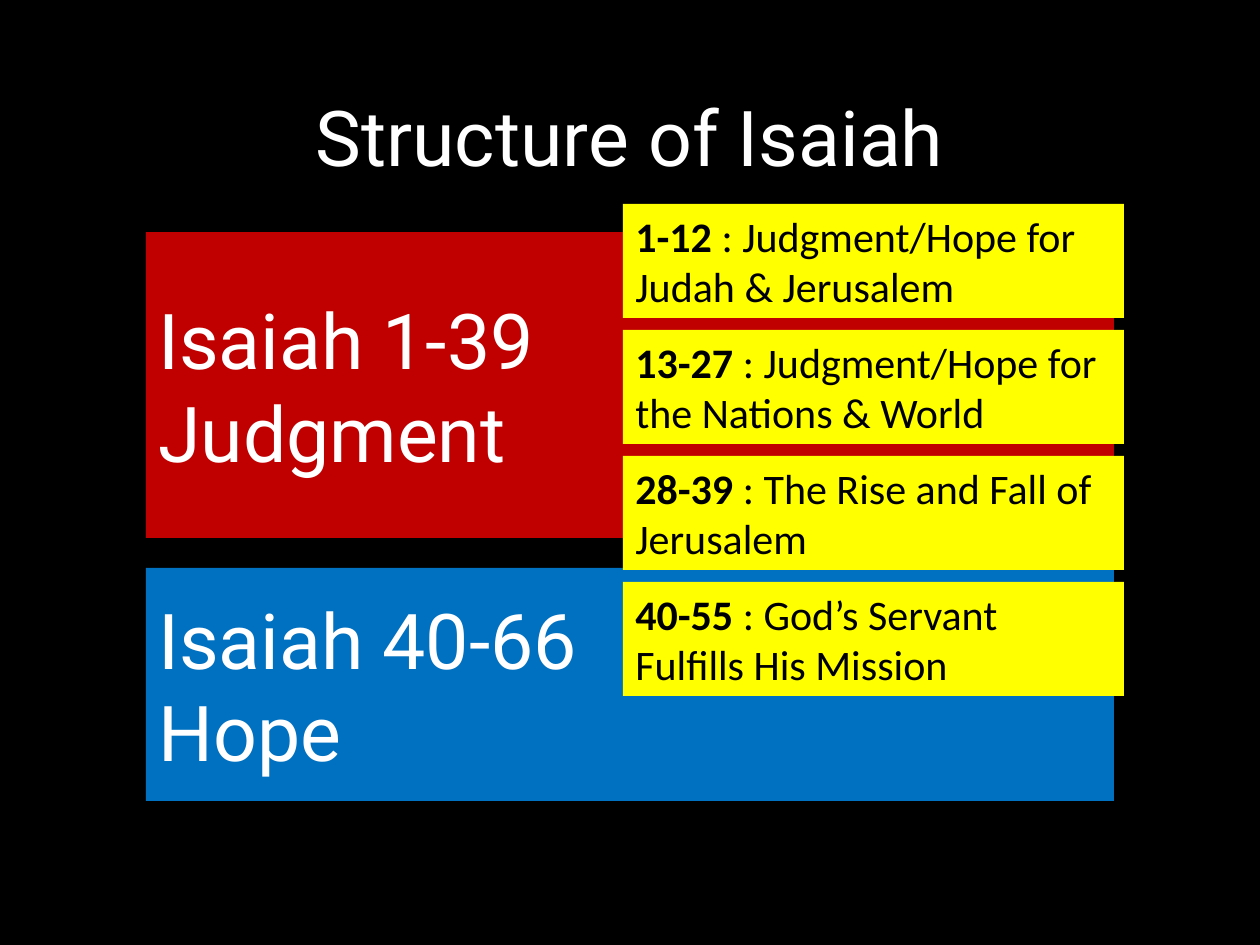
from pptx import Presentation
from pptx.dml.color import RGBColor
from pptx.enum.shapes import MSO_SHAPE
from pptx.enum.text import MSO_ANCHOR, MSO_AUTO_SIZE, PP_ALIGN
from pptx.util import Emu, Pt

RECT = MSO_SHAPE.RECTANGLE
TOP, MIDDLE = MSO_ANCHOR.TOP, MSO_ANCHOR.MIDDLE
LEFT, CENTER = PP_ALIGN.LEFT, PP_ALIGN.CENTER
GROW = MSO_AUTO_SIZE.SHAPE_TO_FIT_TEXT
SCALE = 914400 / 126
COLORS = {"black": "000000", "white": "FFFFFF", "red": "C00000",
          "blue": "0070C0", "yellow": "FFFF00"}
HEAD = {"name": "Roboto", "size": Pt(44)}
BODY = {"name": "Calibri", "size": Pt(24)}


def px(num):
    return Emu(round(num * SCALE))


def paint(name):
    return RGBColor.from_string(COLORS[name])


class Deck:
    """Holds the style and the current slide."""

    def __init__(self, wide, high):
        self.prs = Presentation()
        self.prs.slide_width, self.prs.slide_height = px(wide), px(high)
        self.slide = self.prs.slides.add_slide(self.prs.slide_layouts[6])
        back = self.slide.background.fill
        back.solid()
        back.fore_color.rgb = paint("black")

    def label(self, shape, lines, style, color, frame, para):
        text = shape.text_frame
        for key, val in {"word_wrap": True, **frame}.items():
            setattr(text, key, val)
        for row, runs in enumerate(lines):
            part = text.add_paragraph() if row else text.paragraphs[0]
            for key, val in para.items():
                setattr(part, key, val)
            for words, bold in runs:
                run = part.add_run()
                run.text = words
                run.font.color.rgb = paint(color)
                for key, val in {**style, "bold": bold}.items():
                    setattr(run.font, key, val)

    def title(self, box, words):
        shape = self.slide.shapes.add_textbox(*map(px, box))
        self.label(shape, [[(words, False)]], HEAD, "white",
                   {"vertical_anchor": MIDDLE},
                   {"alignment": CENTER, "line_spacing": 0.9})

    def block(self, box, fill):
        shape = self.slide.shapes.add_shape(RECT, *map(px, box))
        shape.shadow.inherit = False
        shape.fill.solid()
        shape.fill.fore_color.rgb = paint(fill)
        shape.line.fill.background()
        return shape

    def panel(self, box, fill, lines):
        self.label(self.block(box, fill), [[(line, False)] for line in lines],
                   HEAD, "white", {"vertical_anchor": MIDDLE},
                   {"alignment": LEFT})

    def note(self, box, span, words):
        self.label(self.block(box, "yellow"),
                   [[(span, True), (" : " + words, False)]], BODY, "black",
                   {"vertical_anchor": TOP, "auto_size": GROW},
                   {"alignment": LEFT})


def main():
    deck = Deck(1260, 945)
    deck.title((87, 50, 1086, 183), "Structure of Isaiah")
    deck.panel((146, 232, 968, 306), "red", ["Isaiah 1-39", "Judgment"])
    deck.panel((146, 568, 968, 233), "blue", ["Isaiah 40-66", "Hope"])
    notes = [("1-12", "Judgment/Hope for Judah & Jerusalem"),
             ("13-27", "Judgment/Hope for the Nations & World"),
             ("28-39", "The Rise and Fall of Jerusalem"),
             ("40-55", "God’s Servant Fulfills His Mission")]
    for row, (span, words) in enumerate(notes):
        deck.note((623, 204 + 126 * row, 501, 114), span, words)
    deck.prs.save("out.pptx")


if __name__ == "__main__":
    main()
